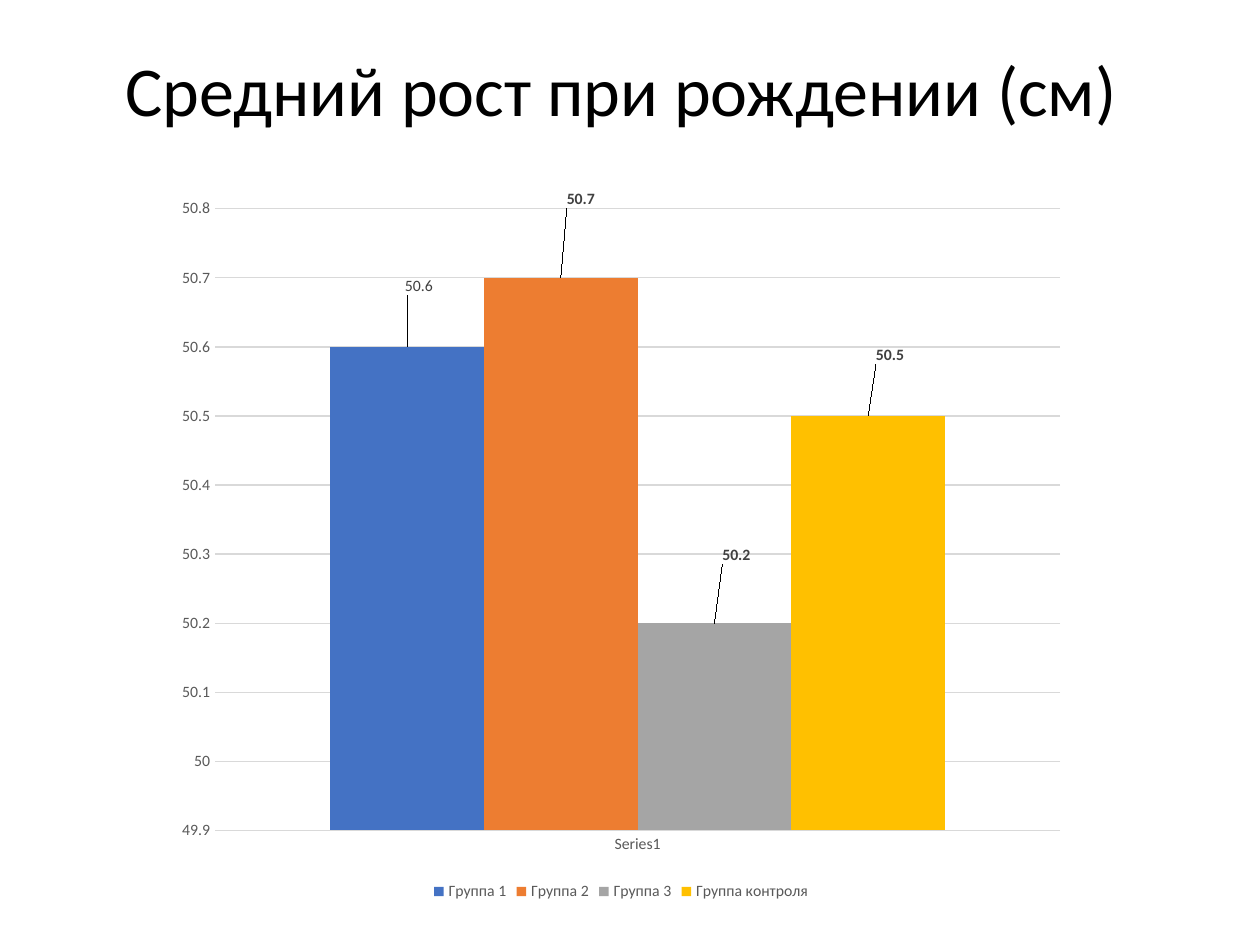
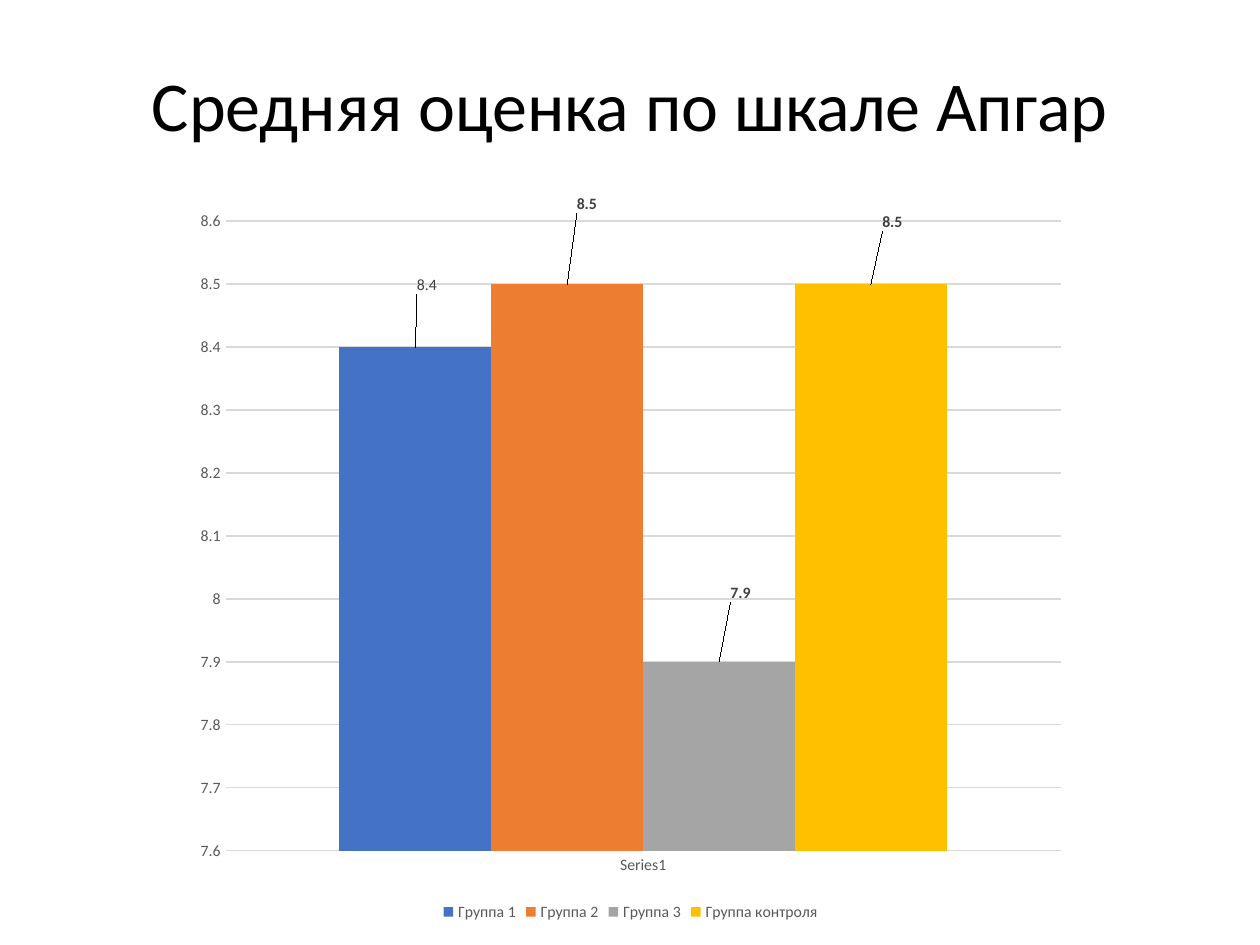
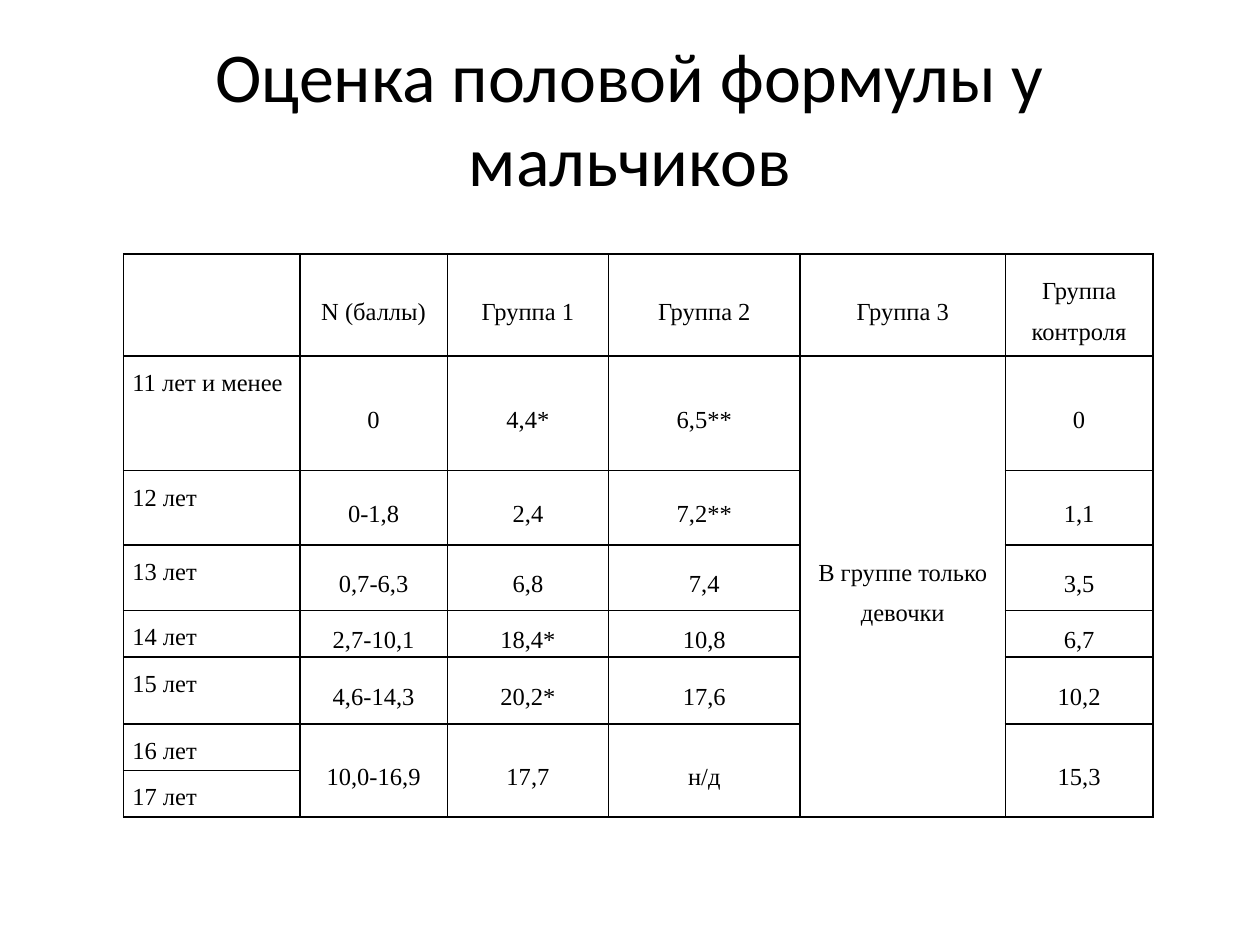
from dataclasses import dataclass

from lxml import etree
from pptx import Presentation
from pptx.chart import data as chart_data
from pptx.dml.color import RGBColor
from pptx.enum import chart as chart_enum
from pptx.enum import text
from pptx.oxml import ns
from pptx.util import Pt


@dataclass(frozen=True)
class Theme:
    ink: RGBColor = RGBColor.from_string("000000")
    axis_ink: RGBColor = RGBColor.from_string("595959")
    label_ink: RGBColor = RGBColor.from_string("404040")
    grid: RGBColor = RGBColor.from_string("D9D9D9")
    group_colors: tuple[str, ...] = ("4472C4", "ED7D31", "A5A5A5", "FFC000")
    sans: str = "Calibri"
    serif: str = "Times New Roman"
    title_size: float = 40
    chart_size: float = 10
    small_size: float = 9
    table_size: float = 14


@dataclass(frozen=True)
class Box:
    left: float
    top: float
    width: float
    height: float

    def points(self) -> tuple[Pt, Pt, Pt, Pt]:
        return Pt(self.left), Pt(self.top), Pt(self.width), Pt(self.height)


@dataclass(frozen=True)
class GroupChart:
    title: str
    title_box: Box
    box: Box
    means: tuple[float, ...]
    low: float
    high: float


THEME = Theme()
GROUPS = ("Группа 1", "Группа 2", "Группа 3", "Группа контроля")
LABEL_SHIFTS = ((0.013, -0.065), (0.022, -0.09), (0.024, -0.075), (0.024, -0.065))

CHARTS = (
    GroupChart("Средний рост при рождении (см)", Box(50.4, 23, 609, 55.4),
               Box(93.6, 105.8, 522.7, 411.8), (50.6, 50.7, 50.2, 50.5), 49.9, 50.8),
    GroupChart("Средняя оценка по шкале Апгар", Box(55.4, 31.7, 609, 55.4),
               Box(104.4, 111.6, 512, 417.6), (8.4, 8.5, 7.9, 8.5), 7.6, 8.6),
)

FORMULA_TITLE = "Оценка половой формулы у мальчиков"
FORMULA_TITLE_BOX = Box(55.4, 15.1, 609, 104.4)
COLUMN_WIDTHS = (100.8, 84.2, 92.2, 109.4, 117.4, 84.2)
ROW_HEIGHTS = (58.3, 65.5, 42.5, 37.5, 26.6, 38.2, 26.6, 26.6)
FORMULA_BOX = Box(70.6, 145.2, sum(COLUMN_WIDTHS), sum(ROW_HEIGHTS))
FORMULA_ROWS = (
    ("", "N (баллы)", *GROUPS),
    ("11 лет и менее", "0", "4,4*", "6,5**", "В группе только девочки", "0"),
    ("12 лет", "0-1,8", "2,4", "7,2**", "", "1,1"),
    ("13 лет", "0,7-6,3", "6,8", "7,4", "", "3,5"),
    ("14 лет", "2,7-10,1", "18,4*", "10,8", "", "6,7"),
    ("15 лет", "4,6-14,3", "20,2*", "17,6", "", "10,2"),
    ("16 лет", "10,0-16,9", "17,7", "н/д", "", "15,3"),
    ("17 лет", "", "", "", "", ""),
)
MERGES = ((1, 4), (6, 1), (6, 2), (6, 3), (6, 5))


def set_font(font, name: str, size: float, color: RGBColor, bold: bool = False) -> None:
    font.name = name
    font.size = Pt(size)
    font.color.rgb = color
    font.bold = bold


def add_titled_slide(prs, title: str, box: Box):
    slide = prs.slides.add_slide(prs.slide_layouts[5])
    heading = slide.shapes.title
    heading.left, heading.top, heading.width, heading.height = box.points()
    frame = heading.text_frame
    frame.text = title
    frame.word_wrap = True
    frame.auto_size = text.MSO_AUTO_SIZE.SHAPE_TO_FIT_TEXT
    frame.vertical_anchor = text.MSO_ANCHOR.TOP
    paragraph = frame.paragraphs[0]
    paragraph.alignment = text.PP_ALIGN.CENTER
    set_font(paragraph.runs[0].font, THEME.sans, THEME.title_size, THEME.ink)
    return slide


def shift_label(label, x: float, y: float) -> None:
    layout = etree.Element(ns.qn("c:layout"))
    manual = etree.SubElement(layout, ns.qn("c:manualLayout"))
    for axis, value in (("x", x), ("y", y)):
        etree.SubElement(manual, ns.qn(f"c:{axis}")).set("val", str(value))
    label.find(ns.qn("c:idx")).addnext(layout)


def add_group_chart(prs, content: GroupChart) -> None:
    slide = add_titled_slide(prs, content.title, content.title_box)
    means = chart_data.CategoryChartData()
    means.categories = ["Series1"]
    for group, mean in zip(GROUPS, content.means):
        means.add_series(group, [mean])
    chart = slide.shapes.add_chart(
        chart_enum.XL_CHART_TYPE.COLUMN_CLUSTERED, *content.box.points(), means).chart
    chart.has_title = False
    set_font(chart.font, THEME.sans, THEME.chart_size, THEME.ink)
    chart.has_legend = True
    chart.legend.position = chart_enum.XL_LEGEND_POSITION.BOTTOM
    chart.legend.include_in_layout = False
    set_font(chart.legend.font, THEME.sans, THEME.small_size, THEME.axis_ink)

    for axis in (chart.category_axis, chart.value_axis):
        axis.major_tick_mark = chart_enum.XL_TICK_MARK.NONE
        axis.minor_tick_mark = chart_enum.XL_TICK_MARK.NONE
        axis.format.line.fill.background()
        set_font(axis.tick_labels.font, THEME.sans, THEME.small_size, THEME.axis_ink)
    scale = chart.value_axis
    scale.minimum_scale, scale.maximum_scale = content.low, content.high
    scale.major_unit = 0.1
    scale.has_major_gridlines = True
    scale.major_gridlines.format.line.color.rgb = THEME.grid
    scale.major_gridlines.format.line.width = Pt(0.75)

    plot = chart.plots[0]
    plot.gap_width = 150
    plot.overlap = 0
    plot.vary_by_categories = False
    for number, (series, color) in enumerate(zip(plot.series, THEME.group_colors)):
        series.invert_if_negative = False
        series.format.fill.solid()
        series.format.fill.fore_color.rgb = RGBColor.from_string(color)
        label = series.points[0].data_label
        set_font(label.font, THEME.sans, THEME.small_size, THEME.label_ink, bold=number > 0)
        label.position = chart_enum.XL_LABEL_POSITION.OUTSIDE_END
    for label, shift in zip(list(chart.element.iter(ns.qn("c:dLbl"))), LABEL_SHIFTS):
        shift_label(label, *shift)


def frame_cell(cell) -> None:
    properties = cell._tc.get_or_add_tcPr()
    for side in ("lnL", "lnR", "lnT", "lnB"):
        line = etree.SubElement(properties, ns.qn(f"a:{side}"), w=str(Pt(1)))
        fill = etree.SubElement(line, ns.qn("a:solidFill"))
        etree.SubElement(fill, ns.qn("a:srgbClr"), val=str(THEME.ink))
    cell.fill.background()


def fill_cell(cell, content: str, is_age: bool) -> None:
    cell.margin_left = cell.margin_right = Pt(5)
    cell.margin_top = cell.margin_bottom = Pt(0)
    frame_cell(cell)
    if not content:
        return
    cell.vertical_anchor = text.MSO_ANCHOR.TOP if is_age else text.MSO_ANCHOR.MIDDLE
    cell.text_frame.text = content
    paragraph = cell.text_frame.paragraphs[0]
    paragraph.alignment = text.PP_ALIGN.JUSTIFY if is_age else text.PP_ALIGN.CENTER
    paragraph.line_spacing = 1.5
    paragraph.space_after = Pt(8)
    set_font(paragraph.runs[0].font, THEME.serif, THEME.table_size, THEME.ink)


def add_formula_table(prs) -> None:
    slide = add_titled_slide(prs, FORMULA_TITLE, FORMULA_TITLE_BOX)
    table = slide.shapes.add_table(
        len(ROW_HEIGHTS), len(COLUMN_WIDTHS), *FORMULA_BOX.points()).table
    table.first_row = table.horz_banding = False
    for column, width in zip(table.columns, COLUMN_WIDTHS):
        column.width = Pt(width)
    for row, height in zip(table.rows, ROW_HEIGHTS):
        row.height = Pt(height)
    for r, contents in enumerate(FORMULA_ROWS):
        for c, content in enumerate(contents):
            fill_cell(table.cell(r, c), content, is_age=c == 0)
    last_row = len(ROW_HEIGHTS) - 1
    for first_row, column in MERGES:
        table.cell(first_row, column).merge(table.cell(last_row, column))


def main() -> None:
    prs = Presentation()
    prs.slide_width, prs.slide_height = Pt(720), Pt(540)
    for content in CHARTS:
        add_group_chart(prs, content)
    add_formula_table(prs)
    prs.save("out.pptx")


if __name__ == "__main__":
    main()
